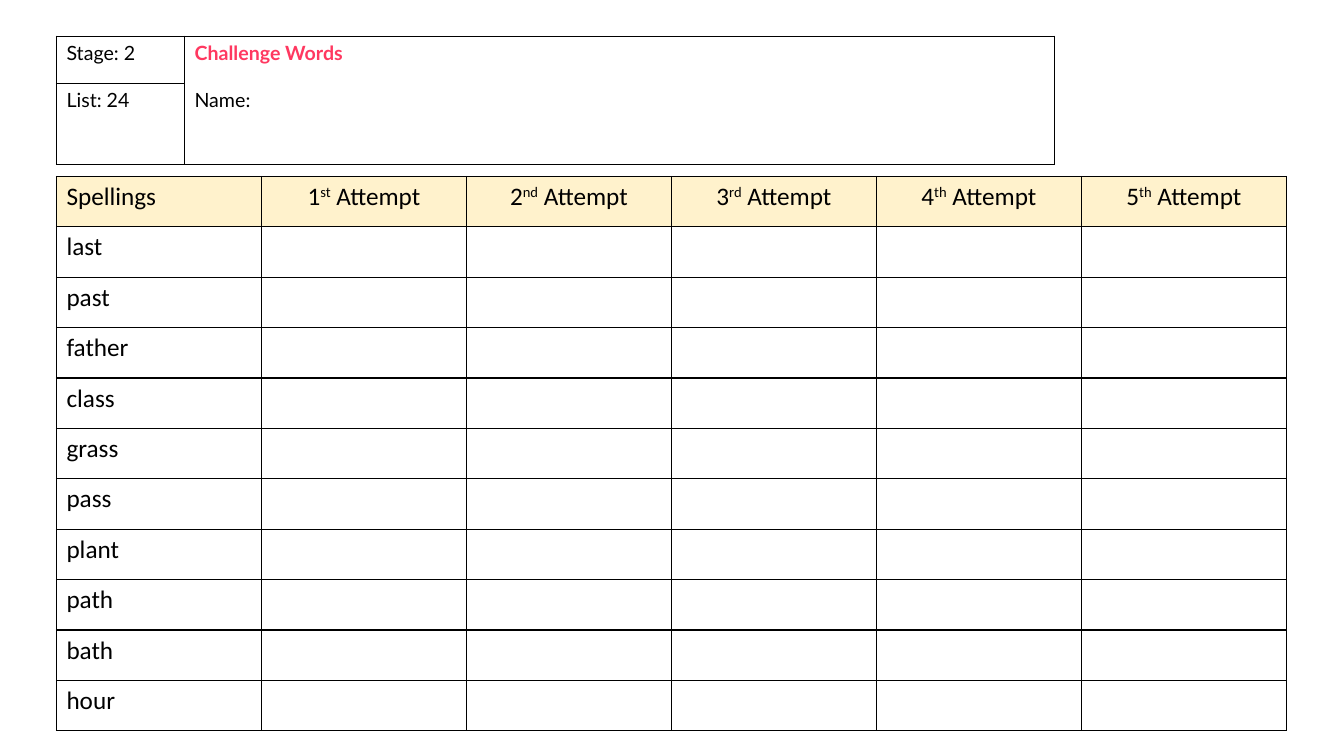
from lxml import etree
from pptx import Presentation
from pptx.dml.color import RGBColor
from pptx.enum.text import PP_ALIGN
from pptx.oxml.ns import qn
from pptx.util import Inches, Pt

COLORS = {"ink": "000000", "title": "FF3860", "header": "FFF2CC"}
ORDINALS = ["st", "nd", "rd", "th", "th"]
WORDS = ["last", "past", "father", "class", "grass",
         "pass", "plant", "path", "bath", "hour"]


def add_run(p, text, font="Calibri", size=18, color="ink", bold=False, base=0):
    r = p.add_run()
    r.text = text
    r.font.name = font
    r.font.size = Pt(size)
    r.font.bold = bold
    r.font.color.rgb = RGBColor.from_string(COLORS[color])
    if base:
        r.font._element.set("baseline", str(base * 1000))


def set_borders(cell):
    tcPr = cell._tc.get_or_add_tcPr()
    for i, side in enumerate(("lnL", "lnR", "lnT", "lnB")):
        ln = etree.Element(qn(f"a:{side}"), w=str(Pt(1)))
        fill = etree.SubElement(ln, qn("a:solidFill"))
        etree.SubElement(fill, qn("a:srgbClr"), val=COLORS["ink"])
        tcPr.insert(i, ln)


def add_grid(slide, left, top, col_widths, row_heights):
    frame = slide.shapes.add_table(
        len(row_heights), len(col_widths), Inches(left), Inches(top),
        Inches(sum(col_widths)), Inches(sum(row_heights)))
    table = frame.table
    table.first_row = table.horz_banding = False
    for col, width in zip(table.columns, col_widths):
        col.width = Inches(width)
    for row, height in zip(table.rows, row_heights):
        row.height = Inches(height)
    for cell in table.iter_cells():
        cell.fill.background()
        set_borders(cell)
    return table


def add_heading(slide, left, top, width, height):
    table = add_grid(slide, left, top, [1.27, width - 1.27], [0.47, height - 0.47])
    table.cell(0, 1).merge(table.cell(1, 1))
    style = {"font": "Lato", "size": 14}
    for row, text in enumerate(["Stage: 2", "List: 24"]):
        add_run(table.cell(row, 0).text_frame.paragraphs[0], text, **style)
    tf = table.cell(0, 1).text_frame
    add_run(tf.paragraphs[0], "Challenge Words", color="title", bold=True, **style)
    p = tf.add_paragraph()
    p.space_before = Pt(16.8)
    add_run(p, "Name:", **style)


def add_attempts(slide, left, top, width, height):
    n_cols, n_rows = len(ORDINALS) + 1, len(WORDS) + 1
    table = add_grid(slide, left, top, [width / n_cols] * n_cols,
                     [height / n_rows] * n_rows)
    for cell in table.rows[0].cells:
        cell.fill.solid()
        cell.fill.fore_color.rgb = RGBColor.from_string(COLORS["header"])
    for row, text in enumerate(["Spellings"] + WORDS):
        add_run(table.cell(row, 0).text_frame.paragraphs[0], text)
    for col, suffix in enumerate(ORDINALS, 1):
        p = table.cell(0, col).text_frame.paragraphs[0]
        p.alignment = PP_ALIGN.CENTER
        add_run(p, str(col))
        add_run(p, suffix, base=30)
        add_run(p, " Attempt")


def main():
    prs = Presentation()
    prs.slide_width, prs.slide_height = Inches(13.33), Inches(7.5)
    slide = prs.slides.add_slide(prs.slide_layouts[6])
    add_attempts(slide, 0.56, 1.75, 12.2, 5.5)
    add_heading(slide, 0.56, 0.36, 9.9, 1.27)
    prs.save("out.pptx")


if __name__ == "__main__":
    main()
